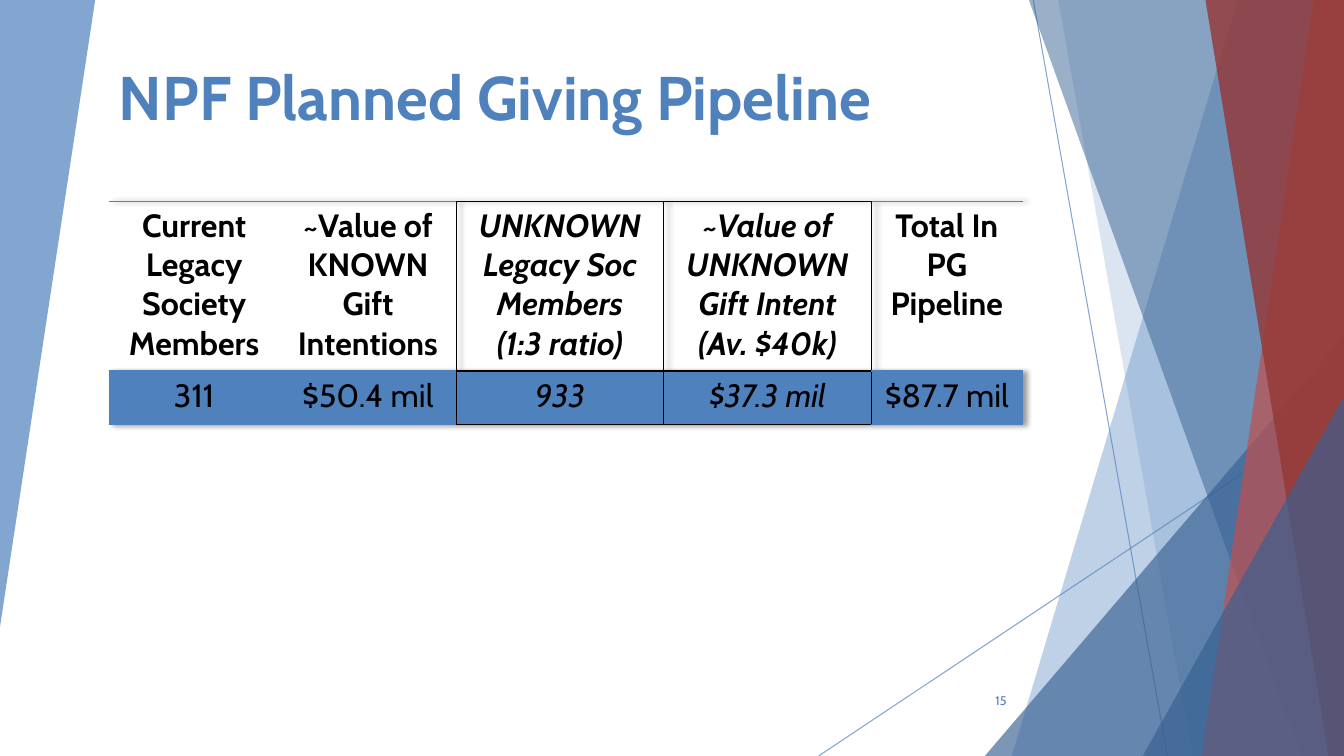
from lxml import etree
from pptx import Presentation
from pptx.dml.color import RGBColor
from pptx.enum.shapes import MSO_CONNECTOR, MSO_SHAPE
from pptx.enum.text import MSO_ANCHOR, PP_ALIGN
from pptx.oxml.ns import qn
from pptx.util import Cm, Pt

COLORS = {"blue": "4F81BD", "navy": "376092", "red": "C0504D",
          "maroon": "953735", "black": "000000"}
FONT = "Cabin"
W, H = 33.87, 19.05


def paint(fmt, color, alpha):
    """Give a fill a solid colour at alpha percent opacity."""
    fmt.solid()
    fmt.fore_color.rgb = RGBColor.from_string(COLORS[color])
    clr = fmt._xPr.find(".//" + qn("a:srgbClr"))
    etree.SubElement(clr, qn("a:alpha"), val=str(alpha * 1000))


def style(p, size, color, align, bold=False, italic=False):
    p.alignment = align
    p.font.name, p.font.size = FONT, Pt(size)
    p.font.bold, p.font.italic = bold, italic
    p.font.color.rgb = RGBColor.from_string(COLORS[color])


prs = Presentation()
prs.slide_width, prs.slide_height = Cm(W), Cm(H)
s = prs.slides.add_slide(prs.slide_layouts[5])

# Thin crossing lines
for x1, y1, x2, y2 in [(26.04, 0, 29.42, H), (W, 10.23, 20.63, H)]:
    line = s.shapes.add_connector(MSO_CONNECTOR.STRAIGHT, Cm(x1), Cm(y1), Cm(x2), Cm(y2))
    paint(line.line.fill, "blue", 70)
    line.line.width = Pt(0.75)
    etree.SubElement(line._element.spPr, qn("a:effectLst"))

# Translucent facets, back to front; a two-number entry is the left and top
# of a right triangle that fills the bottom right corner
facets = [
    ([(0, 0), (2.4, 0), (0, 15.8)], "blue", 70),
    ([(31.19, 0), (W, 0), (W, H), (25.5, H)], "blue", 36),
    ([(26.67, 0), (W, 0), (W, H), (30.05, H)], "blue", 20),
    ((24.82, 8.46), "navy", 66),
    ([(25.93, 0), (W, 0), (W, H), (32.79, H)], "navy", 50),
    ([(33.1, 0), (W, 0), (W, H), (30.28, H)], "red", 70),
    ([(30.38, 0), (W, 0), (W, H), (33.48, H)], "maroon", 80),
    ((28.8, 9.98), "navy", 66),
]
for outline, color, alpha in facets:
    if isinstance(outline, tuple):
        x, y = outline
        sp = s.shapes.add_shape(MSO_SHAPE.ISOSCELES_TRIANGLE, Cm(x), Cm(y), Cm(W - x), Cm(H - y))
        sp.adjustments[0] = 1
    else:
        points = [(Cm(x), Cm(y)) for x, y in outline]
        builder = s.shapes.build_freeform(*points[0])
        builder.add_line_segments(points[1:], close=True)
        sp = builder.convert_to_shape()
    paint(sp.fill, color, alpha)
    sp.line.fill.background()
    sp.shadow.inherit = False

# Title, in front of the facets
title = s.shapes.title
s.shapes._spTree.append(title._element)
title.left, title.top, title.width, title.height = Cm(2.74), Cm(0.43), Cm(23.01), Cm(3.05)
title.text_frame.text = "NPF Planned Giving Pipeline"
title.text_frame.vertical_anchor = MSO_ANCHOR.BOTTOM
p = title.text_frame.paragraphs[0]
p.space_after = Pt(6)
style(p, 44, "blue", PP_ALIGN.LEFT, bold=True)

# Slide number
number = s.shapes.add_textbox(Cm(23.72), Cm(17.15), Cm(1.9), Cm(1.02))
tf = number.text_frame
tf.word_wrap = True
tf.vertical_anchor = MSO_ANCHOR.MIDDLE
tf.text = "15"
tf.paragraphs[0].space_after = Pt(6)
style(tf.paragraphs[0], 9, "blue", PP_ALIGN.RIGHT)

# Pipeline table: the estimated columns are italic and framed in black
rows = [
    ["Current Legacy Society Members", "~Value of KNOWN Gift Intentions",
     "UNKNOWN Legacy Soc Members\n(1:3 ratio)",
     "~Value of UNKNOWN Gift Intent\n(Av. $40k)", "Total In PG Pipeline"],
    ["311", "$50.4 mil", "933", "$37.3 mil", "$87.7 mil"],
]
ESTIMATED = (2, 3)
frame = s.shapes.add_table(2, 5, Cm(2.74), Cm(5.08), Cm(23.03), Cm(5.62))
table = frame.table
table.first_row = table.horz_banding = False
tbl_pr = table._tbl.tblPr
style_id = tbl_pr.find(qn("a:tableStyleId"))
style_id.text = "{2D5ABB26-0587-4C30-8999-92F81FD0307C}"
effects = etree.Element(qn("a:effectLst"))
shadow = etree.SubElement(effects, qn("a:outerShdw"), blurRad="50800", dist="38100", dir="0")
black = etree.SubElement(shadow, qn("a:srgbClr"), val=COLORS["black"])
etree.SubElement(black, qn("a:alpha"), val="40000")
style_id.addprevious(effects)

for col, width in zip(table.columns, [4.31, 4.45, 5.23, 5.23, 3.81]):
    col.width = Cm(width)
for row, height in zip(table.rows, [4.27, 1.35]):
    row.height = Cm(height)

for i, texts in enumerate(rows):
    for j, text in enumerate(texts):
        cell = table.cell(i, j)
        cell.text = text
        for p in cell.text_frame.paragraphs:
            style(p, 23, "black", PP_ALIGN.CENTER, bold=i == 0, italic=j in ESTIMATED)
        edge = "black" if j in ESTIMATED else "blue"
        borders = {"T": edge, "B": edge}
        if j in ESTIMATED or j - 1 in ESTIMATED:
            borders["L"] = "black"
        if j in ESTIMATED or j + 1 in ESTIMATED:
            borders["R"] = "black"
        tc_pr = cell._tc.get_or_add_tcPr()
        for side in "LRTB":
            if side in borders:
                ln = etree.SubElement(tc_pr, qn("a:ln" + side), w=str(Pt(1)))
                fill = etree.SubElement(ln, qn("a:solidFill"))
                etree.SubElement(fill, qn("a:srgbClr"), val=COLORS[borders[side]])
        if i == 0:
            cell.fill.background()
        else:
            paint(cell.fill, "blue", 20)

prs.save("out.pptx")
